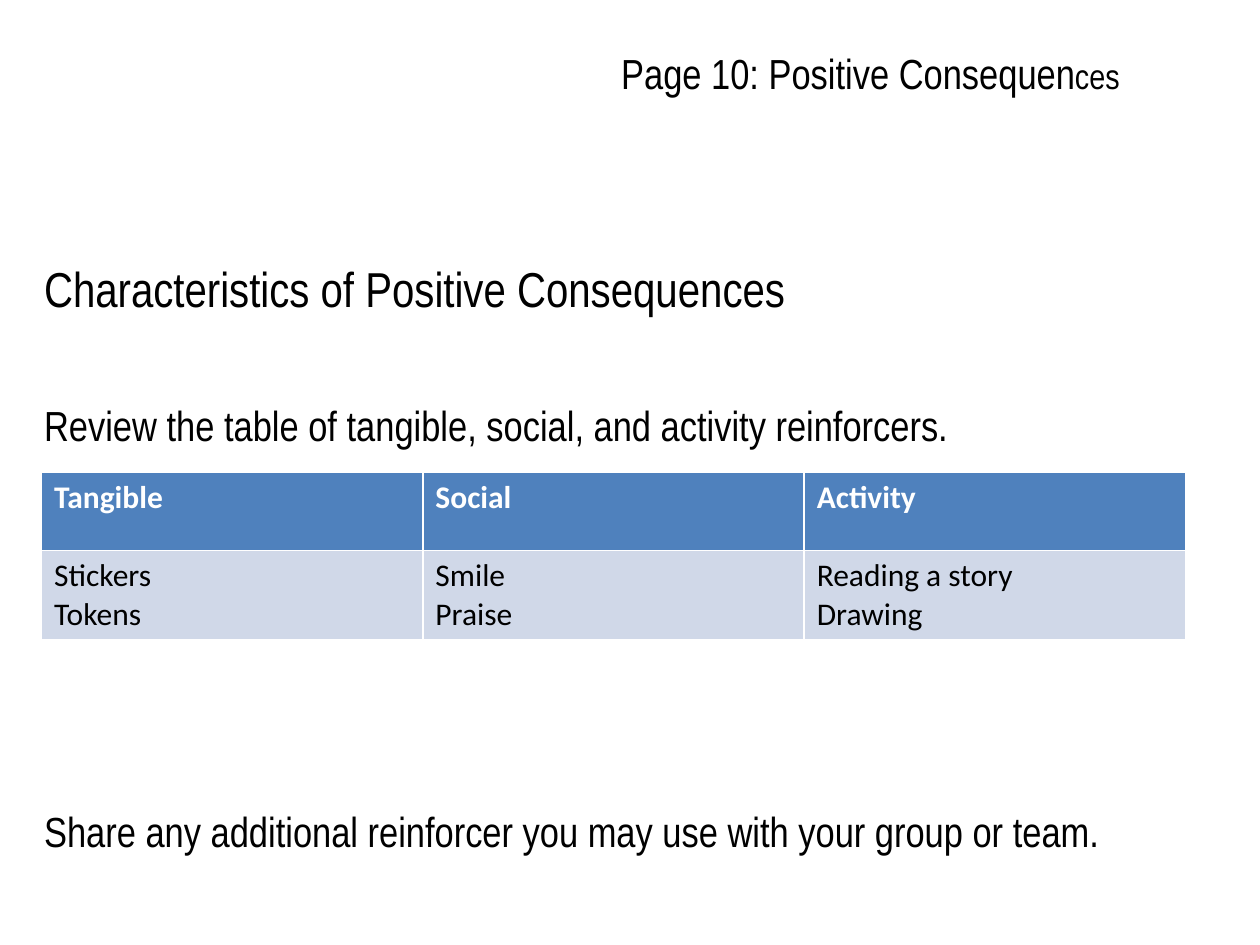
from pptx import Presentation
from pptx.dml.color import RGBColor
from pptx.enum import text
from pptx.util import Inches, Pt

BLACK, WHITE = "000000", "FFFFFF"
HEADER_FILL, BODY_FILL = "4F81BD", "D0D8E8"
REINFORCERS = [
    ("Tangible", "Social", "Activity"),
    ("Stickers\nTokens", "Smile\nPraise", "Reading a story\nDrawing"),
]
ROW_HEIGHTS = (0.62, 0.7)
# Wording, size and space before, in points
BODY = [
    ("Characteristics of Positive Consequences", 28, 0),
    ("Review the table of tangible, social, and activity reinforcers.", 24, 47),
    ("Share any additional reinforcer you may use with your group or team.", 24, 203),
]


def color(value):
    return RGBColor.from_string(value)


def set_font(font, name, size, value, bold=False):
    font.name = name
    font.size = Pt(size)
    font.bold = bold
    font.color.rgb = color(value)


def place(shape, left, top, width, height, anchor):
    shape.left, shape.top = Inches(left), Inches(top)
    shape.width, shape.height = Inches(width), Inches(height)
    frame = shape.text_frame
    frame.word_wrap = True
    frame.auto_size = text.MSO_AUTO_SIZE.NONE
    frame.vertical_anchor = anchor
    return frame


def fill_title(shape):
    frame = place(shape, 4.83, 0.33, 4.25, 0.5, text.MSO_ANCHOR.BOTTOM)
    paragraph = frame.paragraphs[0]
    paragraph.alignment = text.PP_ALIGN.LEFT
    for wording, size in (("Page 10: Positive Consequen", 24), ("ces", 20)):
        run = paragraph.add_run()
        run.text = wording
        set_font(run.font, "Arial Narrow", size, BLACK)


def fill_body(shape):
    frame = place(shape, 0.25, 2, 8.83, 1.58, text.MSO_ANCHOR.TOP)
    frame.text = "\n".join(wording for wording, _, _ in BODY)
    for paragraph, (_, size, space) in zip(frame.paragraphs, BODY):
        paragraph.alignment = text.PP_ALIGN.LEFT
        paragraph.space_before = Pt(space)
        set_font(paragraph.font, "Arial Narrow", size, BLACK)


def add_reinforcer_table(slide):
    table = slide.shapes.add_table(
        len(REINFORCERS), len(REINFORCERS[0]),
        Inches(0.33), Inches(3.75), Inches(9.08), Inches(sum(ROW_HEIGHTS)),
    ).table
    for index, (row, height) in enumerate(zip(table.rows, ROW_HEIGHTS)):
        row.height = Inches(height)
        header = index == 0
        for cell, wording in zip(row.cells, REINFORCERS[index]):
            cell.text = wording
            cell.fill.solid()
            cell.fill.fore_color.rgb = color(HEADER_FILL if header else BODY_FILL)
            for paragraph in cell.text_frame.paragraphs:
                set_font(paragraph.font, "Calibri", 18, WHITE if header else BLACK, header)


def main():
    presentation = Presentation()
    presentation.slide_width, presentation.slide_height = Inches(10), Inches(7.5)
    slide = presentation.slides.add_slide(presentation.slide_layouts[0])
    fill_body(slide.placeholders[1])
    add_reinforcer_table(slide)
    fill_title(slide.shapes.title)
    presentation.save("out.pptx")


if __name__ == "__main__":
    main()
